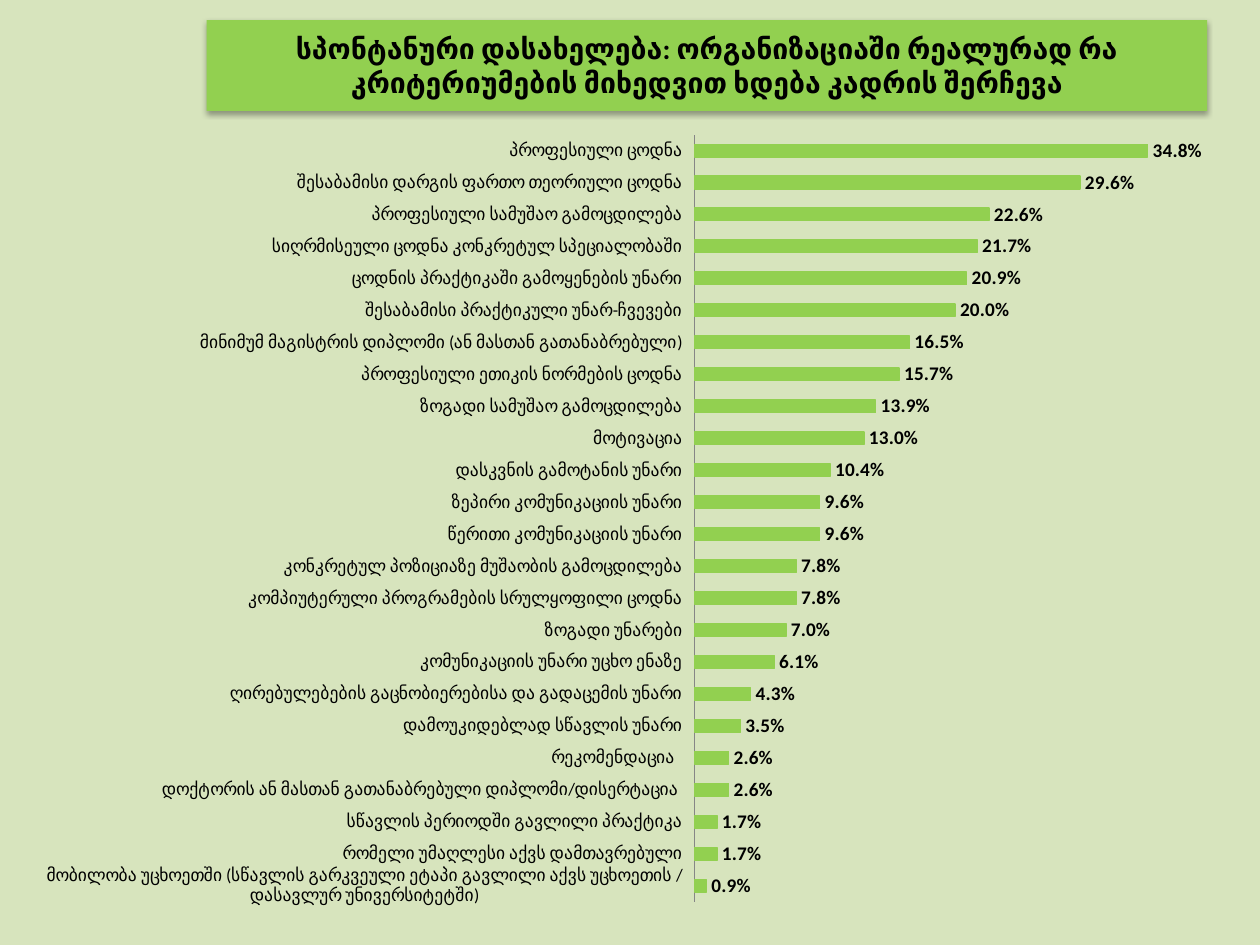
from lxml import etree
from pptx import Presentation
from pptx.chart.data import CategoryChartData
from pptx.dml.color import RGBColor
from pptx.enum.chart import XL_CHART_TYPE, XL_LABEL_POSITION, XL_TICK_LABEL_POSITION, XL_TICK_MARK
from pptx.enum.shapes import MSO_SHAPE
from pptx.enum.text import MSO_ANCHOR, PP_ALIGN
from pptx.oxml import parse_xml
from pptx.oxml.ns import nsdecls, qn
from pptx.util import Inches, Pt

BAR = XL_CHART_TYPE.BAR_CLUSTERED
OUTSIDE = XL_LABEL_POSITION.OUTSIDE_END
LOW = XL_TICK_LABEL_POSITION.LOW
NO_TICK = XL_TICK_MARK.NONE
RECT = MSO_SHAPE.RECTANGLE
MIDDLE = MSO_ANCHOR.MIDDLE
CENTER = PP_ALIGN.CENTER

WIDTH, HEIGHT = 10, 7.5
FONT = "Calibri"
GREEN, PALE, BLACK, GRAY = "92D050", "D7E4BD", "000000", "868686"
PERCENT = "###0.0%"
TITLE = "სპონტანური დასახელება: ორგანიზაციაში რეალურად რა კრიტერიუმების მიხედვით ხდება კადრის შერჩევა"
CRITERIA = [
    ("მობილობა უცხოეთში (სწავლის გარკვეული ეტაპი გავლილი აქვს უცხოეთის / დასავლურ უნივერსიტეტში)", 0.009),
    ("რომელი უმაღლესი აქვს დამთავრებული", 0.017),
    ("სწავლის პერიოდში გავლილი პრაქტიკა", 0.017),
    ("დოქტორის ან მასთან გათანაბრებული დიპლომი/დისერტაცია ", 0.026),
    ("რეკომენდაცია  ", 0.026),
    ("დამოუკიდებლად სწავლის უნარი", 0.035),
    ("ღირებულებების გაცნობიერებისა და გადაცემის უნარი", 0.043),
    ("კომუნიკაციის უნარი უცხო ენაზე", 0.061),
    ("ზოგადი უნარები", 0.07),
    ("კომპიუტერული პროგრამების სრულყოფილი ცოდნა", 0.078),
    ("კონკრეტულ პოზიციაზე მუშაობის გამოცდილება", 0.078),
    ("წერითი კომუნიკაციის უნარი", 0.096),
    ("ზეპირი კომუნიკაციის უნარი", 0.096),
    ("დასკვნის გამოტანის უნარი", 0.104),
    ("მოტივაცია", 0.13),
    ("ზოგადი სამუშაო გამოცდილება", 0.139),
    ("პროფესიული ეთიკის ნორმების ცოდნა", 0.157),
    ("მინიმუმ მაგისტრის დიპლომი (ან მასთან გათანაბრებული)", 0.165),
    ("შესაბამისი პრაქტიკული უნარ-ჩვევები", 0.2),
    ("ცოდნის პრაქტიკაში გამოყენების უნარი", 0.209),
    ("სიღრმისეული ცოდნა კონკრეტულ სპეციალობაში", 0.217),
    ("პროფესიული სამუშაო გამოცდილება", 0.226),
    ("შესაბამისი დარგის ფართო თეორიული ცოდნა", 0.296),
    ("პროფესიული ცოდნა", 0.348),
]


def rgb(value):
    return RGBColor.from_string(value)


def set_font(font, size, bold=False):
    font.name = FONT
    font.size = Pt(size)
    font.bold = bold
    font.color.rgb = rgb(BLACK)


def add_shadow(sp):
    sp._element.spPr.append(parse_xml(
        f'<a:effectLst {nsdecls("a")}>'
        f'<a:outerShdw blurRad="{Pt(3.1)}" dist="{Pt(1.8)}" dir="5400000" rotWithShape="0">'
        '<a:srgbClr val="000000"><a:alpha val="35000"/></a:srgbClr>'
        '</a:outerShdw></a:effectLst>'))


def add_title(s, text, *box):
    sp = s.shapes.add_shape(RECT, *map(Inches, box))
    sp.fill.solid()
    sp.fill.fore_color.rgb = rgb(GREEN)
    sp.line.fill.background()
    add_shadow(sp)
    tf = sp.text_frame
    tf.word_wrap = True
    tf.vertical_anchor = MIDDLE
    p = tf.paragraphs[0]
    p.text = text
    p.alignment = CENTER
    set_font(p.font, 16.2, True)


def set_plot_layout(chart, **shares):
    plot_area = chart._chartSpace.chart.plotArea
    for old in plot_area.findall(qn("c:layout")):
        plot_area.remove(old)
    layout = etree.Element(qn("c:layout"))
    manual = etree.SubElement(layout, qn("c:manualLayout"))
    settings = {"layoutTarget": "inner", "xMode": "edge", "yMode": "edge", **shares}
    for tag, value in settings.items():
        etree.SubElement(manual, qn(f"c:{tag}")).set("val", str(value))
    plot_area.insert(0, layout)


def add_bar_chart(s, rows, *box):
    data = CategoryChartData(number_format=PERCENT)
    data.categories = [name for name, share in rows]
    data.add_series("Series 1", [share for name, share in rows])
    chart = s.shapes.add_chart(BAR, *map(Inches, box), data).chart
    chart.has_legend = False
    chart.has_title = False
    set_font(chart.font, 11)
    set_plot_layout(chart, x=0.55, y=0.02, w=0.43, h=0.95)

    axis = chart.category_axis
    axis.major_tick_mark = NO_TICK
    axis.minor_tick_mark = NO_TICK
    axis.tick_label_position = LOW
    axis.format.line.color.rgb = rgb(GRAY)
    set_font(axis.tick_labels.font, 10)

    scale = chart.value_axis
    scale.minimum_scale = 0
    scale.maximum_scale = 0.4
    scale.has_major_gridlines = False
    scale.visible = False

    plot = chart.plots[0]
    plot.gap_width = 150
    plot.vary_by_categories = False
    bars = plot.series[0].format
    bars.fill.solid()
    bars.fill.fore_color.rgb = rgb(GREEN)
    bars.line.color.rgb = rgb(GREEN)
    bars.line.width = Pt(0.75)

    plot.has_data_labels = True
    labels = plot.data_labels
    labels.show_value = True
    labels.number_format = PERCENT
    labels.number_format_is_linked = False
    labels.position = OUTSIDE
    set_font(labels.font, 11, True)


def main():
    prs = Presentation()
    prs.slide_width, prs.slide_height = Inches(WIDTH), Inches(HEIGHT)
    s = prs.slides.add_slide(prs.slide_layouts[6])
    s.background.fill.solid()
    s.background.fill.fore_color.rgb = rgb(PALE)
    add_title(s, TITLE, 1.64, 0.16, 7.94, 0.72)
    add_bar_chart(s, CRITERIA, 0.23, 0.94, 9.61, 6.41)
    prs.save("out.pptx")


if __name__ == "__main__":
    main()
